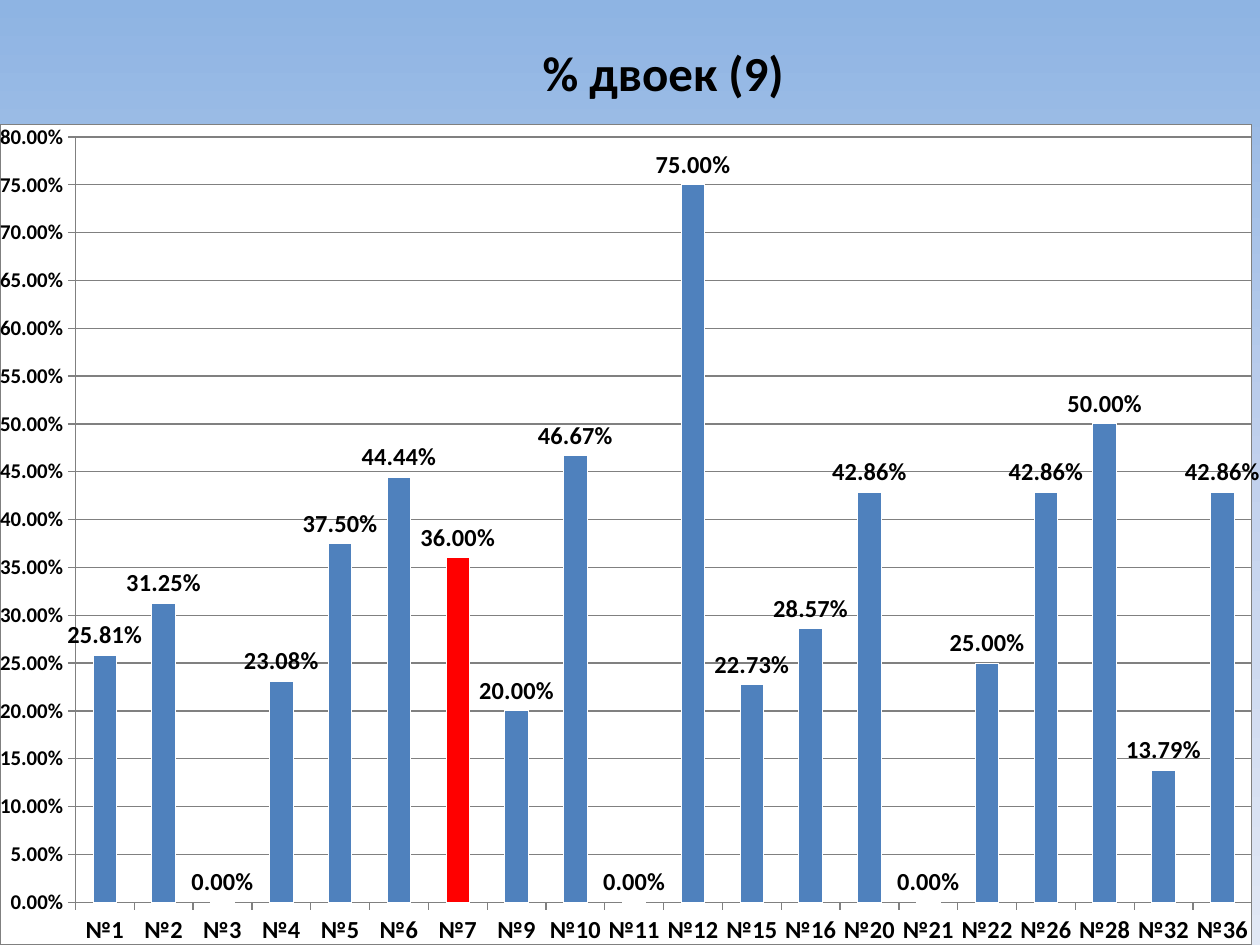
from copy import deepcopy

from lxml import etree
from pptx import Presentation
from pptx.chart.data import CategoryChartData
from pptx.dml.color import RGBColor
from pptx.enum.chart import XL_CHART_TYPE, XL_LABEL_POSITION, XL_TICK_MARK
from pptx.enum.text import MSO_AUTO_SIZE
from pptx.oxml import parse_xml
from pptx.oxml.ns import qn
from pptx.util import Cm, Pt

COLUMN_CLUSTERED = XL_CHART_TYPE.COLUMN_CLUSTERED
OUTSIDE_END = XL_LABEL_POSITION.OUTSIDE_END
TICK_OUTSIDE = XL_TICK_MARK.OUTSIDE
FIT_SHAPE = MSO_AUTO_SIZE.SHAPE_TO_FIT_TEXT

BLACK = RGBColor(0x00, 0x00, 0x00)
WHITE = RGBColor(0xFF, 0xFF, 0xFF)
GREY = RGBColor(0x80, 0x80, 0x80)
BLUE = RGBColor(0x4F, 0x81, 0xBD)
RED = RGBColor(0xFF, 0x00, 0x00)
SKY_TOP = RGBColor(0x8E, 0xB4, 0xE3)
SKY_MIDDLE = RGBColor(0xC2, 0xD1, 0xED)
SKY_BOTTOM = RGBColor(0xE1, 0xE8, 0xF5)

FONT = "Calibri"
PERCENT = "0.00%"
HIGHLIGHTED = "№7"
FAILING_SHARES = {
    "№1": 0.2581, "№2": 0.3125, "№3": 0, "№4": 0.2308, "№5": 0.375,
    "№6": 0.4444, "№7": 0.36, "№9": 0.2, "№10": 0.4667, "№11": 0,
    "№12": 0.75, "№15": 0.2273, "№16": 0.2857, "№20": 0.4286, "№21": 0,
    "№22": 0.25, "№26": 0.4286, "№28": 0.5, "№32": 0.1379, "№36": 0.4286,
}


def style_font(font, size, bold=True):
    font.name = FONT
    font.size = Pt(size)
    font.bold = bold
    font.color.rgb = BLACK


presentation = Presentation()
presentation.slide_width = Cm(25.4)
presentation.slide_height = Cm(19.05)
slide = presentation.slides.add_slide(presentation.slide_layouts[6])

# Background: three-stop vertical gradient
background = slide.background.fill
background.gradient()
background.gradient_angle = 270
first_stop = background.gradient_stops[0]
stop_list = slide.background._cSld.find(".//" + qn("a:gsLst"))
stop_list.insert(1, deepcopy(stop_list[0]))
for stop, position, color in zip(
    background.gradient_stops, (0, 0.5, 1), (SKY_TOP, SKY_MIDDLE, SKY_BOTTOM)
):
    stop.position = position
    stop.color.rgb = color

# Title
title = slide.shapes.add_textbox(Cm(10.69), Cm(0.74), Cm(5.44), Cm(1.45))
title.text_frame.word_wrap = False
title.text_frame.auto_size = FIT_SHAPE
run = title.text_frame.paragraphs[0].add_run()
run.text = "% двоек (9)"
style_font(run.font, 28)

# Chart
chart_data = CategoryChartData(number_format=PERCENT)
chart_data.categories = list(FAILING_SHARES)
chart_data.add_series("Series 1", list(FAILING_SHARES.values()))
chart = slide.shapes.add_chart(
    COLUMN_CLUSTERED, Cm(0), Cm(2.51), Cm(25.4), Cm(16.54), chart_data
).chart
chart.has_title = False
chart.has_legend = False
style_font(chart.font, 10, bold=False)

# Chart frame and plot layout
frame = parse_xml(
    '<c:spPr xmlns:c="http://schemas.openxmlformats.org/drawingml/2006/chart"'
    ' xmlns:a="http://schemas.openxmlformats.org/drawingml/2006/main">'
    f'<a:solidFill><a:srgbClr val="{WHITE}"/></a:solidFill>'
    f'<a:ln w="0"><a:solidFill><a:srgbClr val="{GREY}"/></a:solidFill></a:ln>'
    "</c:spPr>"
)
chart_space = chart.element
chart_space.find(qn("c:chart")).addnext(frame)
plot_area = chart_space.find(".//" + qn("c:plotArea"))
for old_layout in plot_area.findall(qn("c:layout")):
    plot_area.remove(old_layout)
layout = etree.Element(qn("c:layout"))
plot_area.insert(0, layout)
manual_layout = etree.SubElement(layout, qn("c:manualLayout"))
for tag, value in (
    ("layoutTarget", "outer"), ("xMode", "edge"), ("yMode", "edge"),
    ("x", "0"), ("y", "0"), ("w", "1"), ("h", "1"),
):
    etree.SubElement(manual_layout, qn(f"c:{tag}")).set("val", value)

# Axes
value_axis = chart.value_axis
for axis, size in ((chart.category_axis, 14), (value_axis, 12)):
    axis.major_tick_mark = TICK_OUTSIDE
    axis.format.line.color.rgb = GREY
    axis.format.line.width = Pt(0)
    style_font(axis.tick_labels.font, size)
value_axis.minimum_scale = 0
value_axis.maximum_scale = 0.8
value_axis.major_unit = 0.05
value_axis.tick_labels.number_format = PERCENT
value_axis.tick_labels.number_format_is_linked = False
value_axis.has_major_gridlines = True
value_axis.major_gridlines.format.line.color.rgb = GREY
value_axis.major_gridlines.format.line.width = Pt(0)

# Columns and their labels
plot = chart.plots[0]
plot.gap_width = 150
plot.vary_by_categories = False
series = plot.series[0]
highlighted_point = series.points[list(FAILING_SHARES).index(HIGHLIGHTED)]
for column, color in ((series, BLUE), (highlighted_point, RED)):
    column.format.fill.solid()
    column.format.fill.fore_color.rgb = color
    column.format.line.color.rgb = WHITE
    column.format.line.width = Pt(0)
labels = series.data_labels
labels.show_value = True
labels.position = OUTSIDE_END
labels.number_format = PERCENT
labels.number_format_is_linked = False
style_font(labels.font, 14)

presentation.save("out.pptx")
